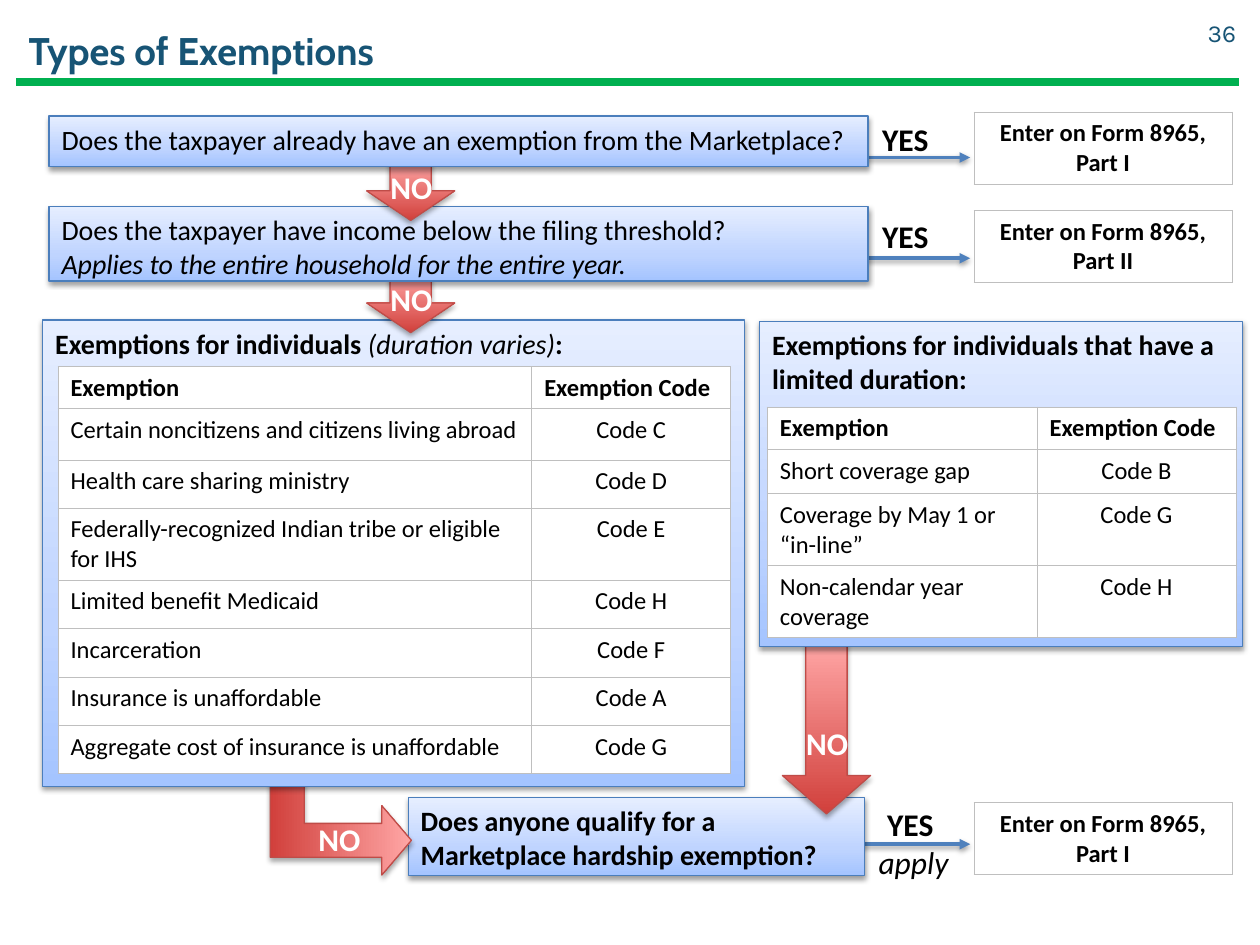
from dataclasses import dataclass

from lxml import etree
from pptx import Presentation
from pptx import util as u
from pptx.dml import color
from pptx.enum import shapes, text
from pptx.oxml import ns

Inches = u.Inches
LEFT, MID, RIGHT = text.PP_ALIGN.LEFT, text.PP_ALIGN.CENTER, text.PP_ALIGN.RIGHT
TOP, MIDDLE = text.MSO_ANCHOR.TOP, text.MSO_ANCHOR.MIDDLE
KIND = shapes.MSO_SHAPE


@dataclass(frozen=True)
class Theme:
    navy: str = "175475"
    green: str = "00B050"
    black: str = "000000"
    white: str = "FFFFFF"
    wire: str = "4F81BD"
    edge: str = "4B7EBC"
    red: str = "BF4C48"
    grid: str = "BFBFBF"
    blues: tuple = ((0, "A4C4FF"), (35, "BFD4FF"), (100, "E6EEFF"))
    reds: tuple = ((0, "D1403C"), (100, "FFA6A5"))
    head: str = "Cabin"
    body: str = "Calibri"
    count: str = "Karla"
    title: int = 22
    label: int = 18
    box: int = 16
    cell: int = 14


T = Theme()


def rgb(code):
    return color.RGBColor.from_string(code)


def node(home, tag, **attrs):
    return etree.SubElement(home, ns.qn(tag), {k: str(v) for k, v in attrs.items()})


def tint(home, code):
    return node(node(home, "a:solidFill"), "a:srgbClr", val=code)


def write(frame, words, size=T.box, font=T.body, ink=T.black, bold=False,
          slant=False, align=LEFT, anchor=TOP, pad=0.1):
    frame.word_wrap = True
    frame.vertical_anchor = anchor
    frame.margin_left = frame.margin_right = Inches(pad)
    paras = [[(words, {})]] if isinstance(words, str) else words
    for i, runs in enumerate(paras):
        para = frame.paragraphs[0] if i == 0 else frame.add_paragraph()
        para.alignment = align
        for part, extra in runs:
            run = para.add_run()
            run.text = part
            run.font.name = font
            run.font.size = u.Pt(size)
            run.font.color.rgb = rgb(ink)
            run.font.bold = extra.get("bold", bold)
            run.font.italic = extra.get("slant", slant)


def shade(props, alpha=38, dist=1.6):
    shadow = node(node(props, "a:effectLst"), "a:outerShdw", blurRad=u.Pt(3.1),
                  dist=u.Pt(dist), dir=5400000, rotWithShape=0)
    node(node(shadow, "a:srgbClr", val=T.black), "a:alpha", val=alpha * 1000)


def fade(props, stops):
    grad = node(props, "a:gradFill", rotWithShape=1)
    stack = node(grad, "a:gsLst")
    for pos, code in stops:
        node(node(stack, "a:gs", pos=pos * 1000), "a:srgbClr", val=code)
    node(grad, "a:lin", ang=16200000, scaled=0)


def label(home, at, words, **form):
    frame = home.add_textbox(*map(Inches, at)).text_frame
    write(frame, words, **{"anchor": MIDDLE, **form})


def tag(home, at, words, **form):
    label(home, at, words, **{"size": T.label, "bold": True, "align": MID, "pad": 0, **form})


def block(home, kind, at, stops, edge, **shadow):
    shape = home.add_shape(kind, *map(Inches, at))
    fade(shape._element.spPr, stops)
    shape.line.color.rgb = rgb(edge)
    shape.line.width = u.Pt(0.75)
    shade(shape._element.spPr, **shadow)
    return shape


def panel(home, at, words, **form):
    write(block(home, KIND.RECTANGLE, at, T.blues, T.edge).text_frame, words, **form)


def arrow(home, at, spot, kind=KIND.DOWN_ARROW, bends=(0.468, 0.5), turn=0):
    group = home.add_group_shape().shapes
    shape = block(group, kind, at, T.reds, T.red, alpha=35, dist=1.8)
    shape.rotation = turn
    for i, bend in enumerate(bends):
        shape.adjustments[i] = bend
    tag(group, spot, "NO", ink=T.white)


def link(home, left, right, y, ink, width, tip=True):
    wire = home.add_connector(shapes.MSO_CONNECTOR.STRAIGHT, *map(Inches, (left, y, right, y)))
    wire.line.color.rgb = rgb(ink)
    wire.line.width = u.Pt(width)
    props = wire._element.spPr
    if tip:
        node(wire.line._get_or_add_ln(), "a:tailEnd", type="triangle")
        shade(props)
    else:
        node(props, "a:effectLst")


def fill(cell, words, **form):
    props = cell._tc.get_or_add_tcPr()
    for side in ("a:lnL", "a:lnR", "a:lnT", "a:lnB"):
        tint(node(props, side, w=u.Pt(0.5)), T.grid)
    cell.fill.solid()
    cell.fill.fore_color.rgb = rgb(T.white)
    write(cell.text_frame, words, size=T.cell, **form)
    cell.vertical_anchor = form.get("anchor", TOP)


def grid(home, left, top, cols, rows):
    table = home.add_table(len(rows), len(cols), Inches(left), Inches(top),
                           Inches(sum(cols)), Inches(sum(rows))).table
    table.first_row = table.horz_banding = False
    for col, width in zip(table.columns, cols):
        col.width = Inches(width)
    for row, height in zip(table.rows, rows):
        row.height = Inches(height)
    return table


def codes(home, left, top, cols, rows, items):
    table = grid(home, left, top, cols, rows)
    for c, words in enumerate(("Exemption", "Exemption Code")):
        fill(table.cell(0, c), words, bold=True, anchor=MIDDLE)
    for r, (name, code) in enumerate(items, 1):
        fill(table.cell(r, 0), name)
        fill(table.cell(r, 1), f"Code {code}", align=MID)


def entry(home, top, part):
    cell = grid(home, 7.73, top, [2.05], [0.57]).cell(0, 0)
    fill(cell, f"Enter on Form 8965, Part {part}", bold=True, align=MID, anchor=MIDDLE)


def main():
    deck = Presentation()
    deck.slide_width, deck.slide_height = Inches(10), Inches(7.5)
    home = deck.slides.add_slide(deck.slide_layouts[6]).shapes

    link(home, 0.13, 9.83, 0.65, T.green, 4.75, tip=False)
    label(home, (0.13, 0.11, 9, 0.57), "Types of Exemptions",
          size=T.title, font=T.head, ink=T.navy, bold=True)
    label(home, (9.4, 0.06, 0.51, 0.4), "36",
          size=T.cell, font=T.count, ink=T.navy, align=RIGHT)
    for y in (1.25, 2.05, 6.7):
        link(home, 6.5, 7.7, y, T.wire, 2)

    panel(home, (3.24, 6.33, 3.62, 0.62),
          "Does anyone qualify for a Marketplace hardship exemption?", bold=True)
    arrow(home, (2.3, 5.98, 0.81, 1.12), (2.41, 6.48, 0.57, 0.35),
          KIND.BENT_UP_ARROW, (0.333, 0.34, 0.29), 90)
    panel(home, (0.34, 2.54, 5.57, 3.7), [[
        ("Exemptions for individuals ", {}),
        ("(duration varies)", {"bold": False, "slant": True}),
        (":", {})]], bold=True)
    arrow(home, (2.91, 2.17, 0.7, 0.47), (2.98, 2.2, 0.57, 0.35))
    panel(home, (0.39, 1.64, 6.5, 0.59), [
        [("Does the taxpayer have income below the filing threshold?", {})],
        [("Applies to the entire household for the entire year.", {"slant": True})]])
    arrow(home, (2.91, 1.28, 0.7, 0.47), (2.98, 1.31, 0.57, 0.35))
    arrow(home, (6.21, 5.1, 0.7, 1.36), (6.28, 5.69, 0.57, 0.41), bends=(0.468, 0.435))
    panel(home, (6.03, 2.55, 3.83, 2.58),
          "Exemptions for individuals that have a limited duration:", bold=True)
    panel(home, (0.39, 0.92, 6.5, 0.4),
          "Does the taxpayer already have an exemption from the Marketplace?")

    codes(home, 0.46, 2.91, [3.76, 1.58], [0.33, 0.41, 0.38, 0.57] + [0.385] * 4, [
        ("Certain noncitizens and citizens living abroad", "C"),
        ("Health care sharing ministry", "D"),
        ("Federally-recognized Indian tribe or eligible for IHS", "E"),
        ("Limited benefit Medicaid", "H"),
        ("Incarceration", "F"),
        ("Insurance is unaffordable", "A"),
        ("Aggregate cost of insurance is unaffordable", "G")])
    codes(home, 6.09, 3.23, [2.14, 1.58], [0.34, 0.35, 0.57, 0.57], [
        ("Short coverage gap", "B"),
        ("Coverage by May 1 or “in-line”", "G"),
        ("Non-calendar year coverage", "H")])

    for left, top, row, part in ((6.9, 0.93, 0.89, "I"), (6.9, 1.7, 1.67, "II"),
                                 (6.94, 6.36, 6.37, "I")):
        tag(home, (left, top, 0.57, 0.35), "YES")
        entry(home, row, part)
    tag(home, (6.8, 6.66, 0.9, 0.36), "apply", bold=False, slant=True)

    deck.save("out.pptx")


if __name__ == "__main__":
    main()
